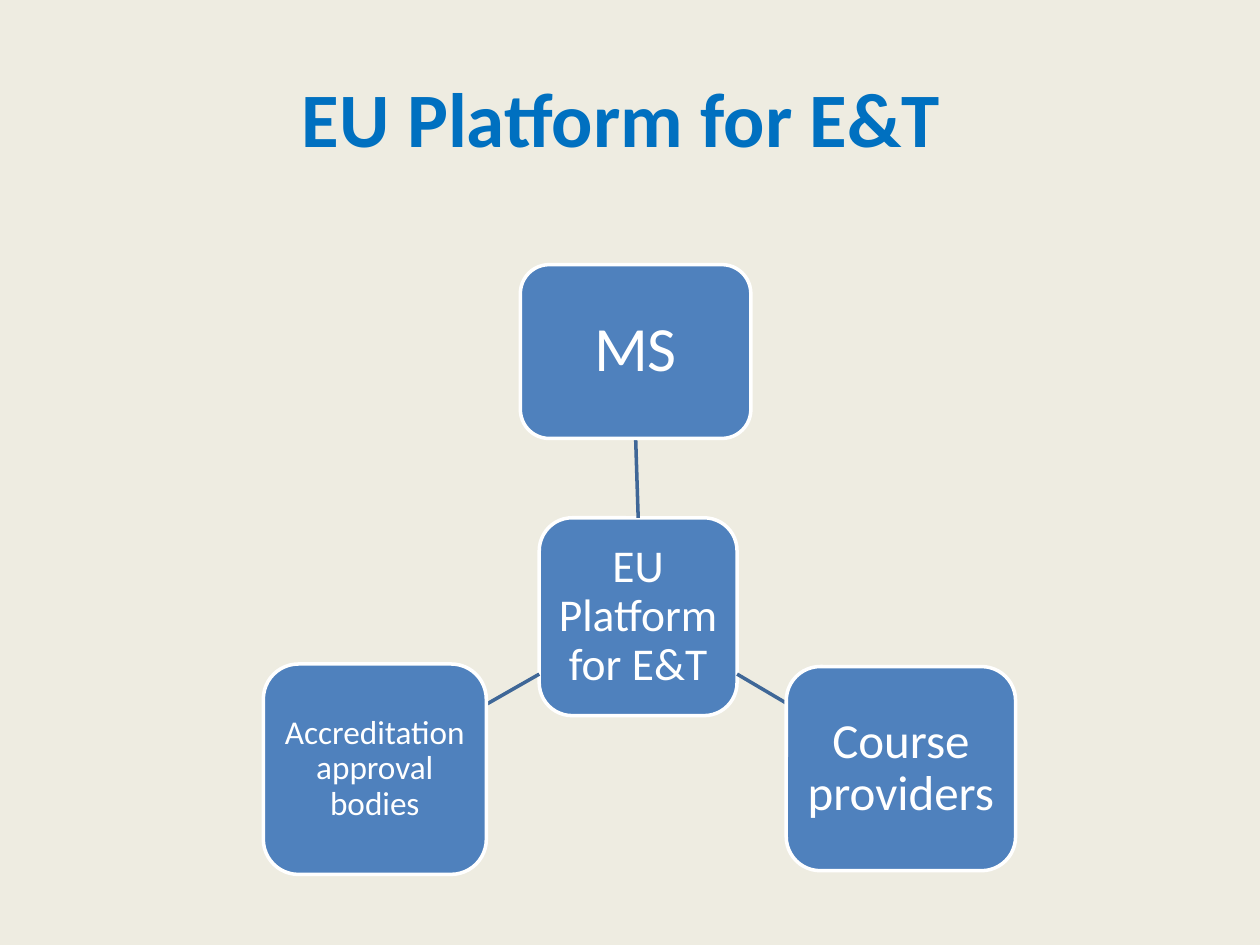
from dataclasses import dataclass

from lxml import etree
from pptx import Presentation
from pptx.dml.color import RGBColor
from pptx.enum.shapes import MSO_CONNECTOR, MSO_SHAPE
from pptx.enum.text import MSO_ANCHOR, PP_ALIGN
from pptx.oxml.ns import qn
from pptx.shapes.autoshape import Shape
from pptx.shapes.connector import Connector
from pptx.slide import Slide
from pptx.util import Inches, Pt

ROUND = MSO_SHAPE.ROUNDED_RECTANGLE
STRAIGHT = MSO_CONNECTOR.STRAIGHT
MIDDLE = MSO_ANCHOR.MIDDLE
CENTER = PP_ALIGN.CENTER
TOP, BOTTOM = 0, 2
TITLE_ONLY = 5


@dataclass(frozen=True)
class Theme:
    font: str = "Calibri"
    back: RGBColor = RGBColor(0xEE, 0xEC, 0xE1)
    title: RGBColor = RGBColor(0x00, 0x70, 0xC0)
    fill: RGBColor = RGBColor(0x4F, 0x81, 0xBD)
    edge: RGBColor = RGBColor(0xFF, 0xFF, 0xFF)
    link: RGBColor = RGBColor(0x3F, 0x67, 0x97)
    title_size: int = 44
    line: int = 2


@dataclass(frozen=True)
class Node:
    text: str
    left: float
    top: float
    width: float
    height: float
    size: int
    inset: float


@dataclass(frozen=True)
class Link:
    x1: float
    y1: float
    x2: float
    y2: float


THEME = Theme()
HUB = Node("EU Platform for E&T", 4.28, 4.11, 1.57, 1.57, 26, 0.07)
STATES = Node("MS", 4.13, 2.1, 1.83, 1.38, 36, 0.1)
OTHERS = (
    Node("Course providers", 6.24, 5.29, 1.82, 1.62, 28, 0.08),
    Node("Accreditation approval bodies", 2.09, 5.27, 1.77, 1.67, 19, 0.05),
)
SIDES = (Link(5.85, 5.35, 6.24, 5.58), Link(4.28, 5.35, 3.86, 5.59))
STEM = Link(5.06, 4.11, 5.05, 3.48)


def add_title(slide: Slide, text: str) -> None:
    title = slide.shapes.title
    title.left, title.top = Inches(0.5), Inches(0.3)
    title.width, title.height = Inches(9), Inches(1.25)
    frame = title.text_frame
    frame.text = text
    frame.vertical_anchor = MIDDLE
    para = frame.paragraphs[0]
    para.alignment = CENTER
    para.font.name = THEME.font
    para.font.size = Pt(THEME.title_size)
    para.font.bold = True
    para.font.color.rgb = THEME.title


def add_node(slide: Slide, node: Node) -> Shape:
    shape = slide.shapes.add_shape(
        ROUND, Inches(node.left), Inches(node.top),
        Inches(node.width), Inches(node.height))
    shape.shadow.inherit = False
    shape.fill.solid()
    shape.fill.fore_color.rgb = THEME.fill
    shape.line.color.rgb = THEME.edge
    shape.line.width = Pt(THEME.line)
    frame = shape.text_frame
    frame.word_wrap = True
    frame.vertical_anchor = MIDDLE
    frame.margin_left = frame.margin_right = Inches(node.inset)
    frame.margin_top = frame.margin_bottom = Inches(node.inset)
    frame.text = node.text
    para = frame.paragraphs[0]
    para.alignment = CENTER
    para.line_spacing = 0.9
    para.font.name = THEME.font
    para.font.size = Pt(node.size)
    para.font.color.rgb = THEME.edge
    return shape


def add_link(slide: Slide, link: Link) -> Connector:
    line = slide.shapes.add_connector(
        STRAIGHT, Inches(link.x1), Inches(link.y1),
        Inches(link.x2), Inches(link.y2))
    line.line.color.rgb = THEME.link
    line.line.width = Pt(THEME.line)
    etree.SubElement(line._element.spPr, qn("a:effectLst"))
    return line


def main() -> None:
    deck = Presentation()
    deck.slide_width, deck.slide_height = Inches(10), Inches(7.5)
    slide = deck.slides.add_slide(deck.slide_layouts[TITLE_ONLY])
    slide.background.fill.solid()
    slide.background.fill.fore_color.rgb = THEME.back
    add_title(slide, "EU Platform for E&T ")

    hub = add_node(slide, HUB)
    stem = add_link(slide, STEM)
    states = add_node(slide, STATES)
    stem.begin_connect(hub, TOP)
    stem.end_connect(states, BOTTOM)
    for link, node in zip(SIDES, OTHERS):
        add_link(slide, link)
        add_node(slide, node)
    deck.save("out.pptx")


if __name__ == "__main__":
    main()
